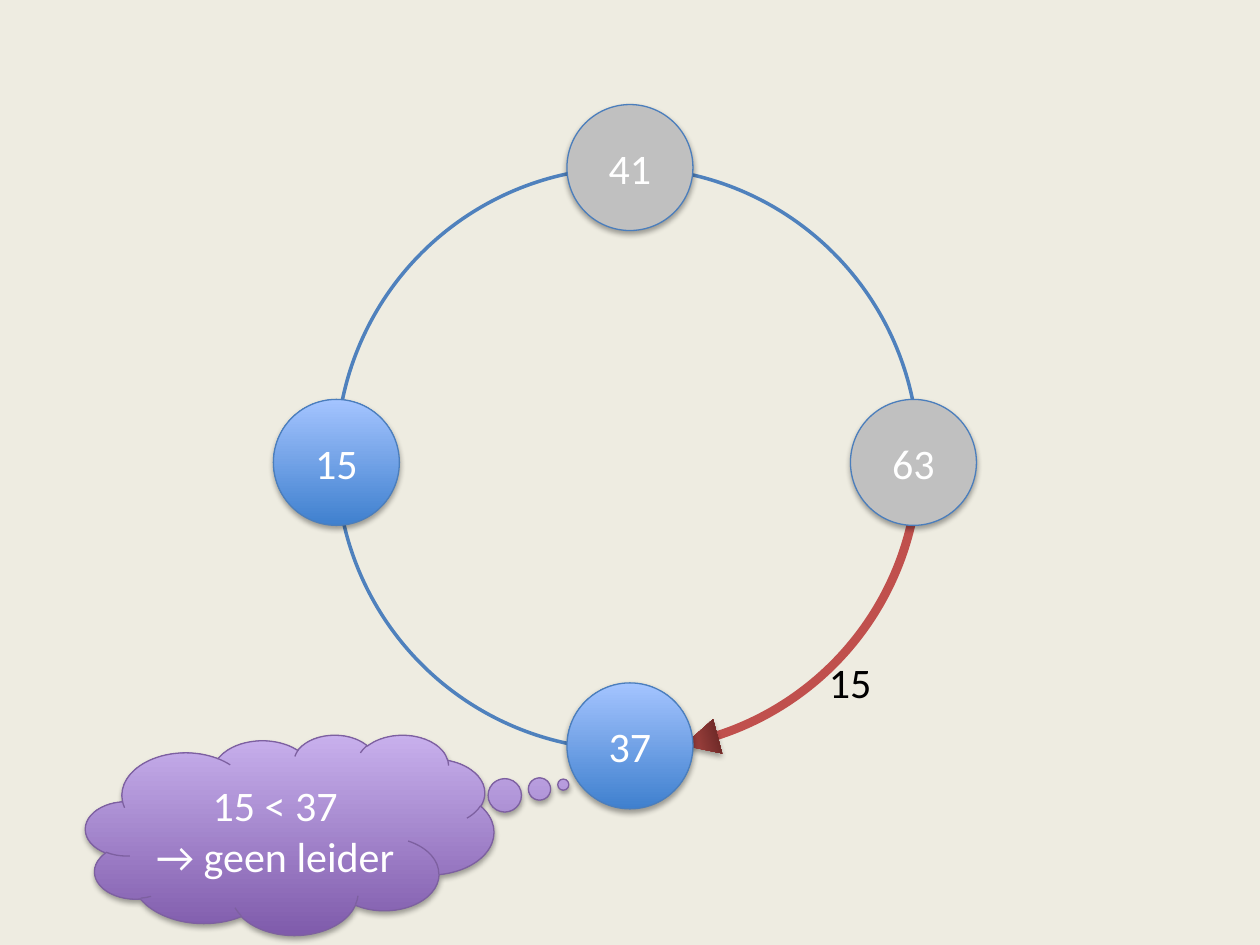
from lxml.etree import SubElement
from pptx import Presentation
from pptx.dml.color import RGBColor
from pptx.enum.shapes import MSO_SHAPE as Shape
from pptx.enum.text import MSO_ANCHOR as Anchor, MSO_AUTO_SIZE as AutoSize, PP_ALIGN as Align
from pptx.oxml.ns import qn
from pptx.util import Inches, Pt

BLUE = ("3F80CE", "A4C4FF")
PURPLE = ("7F5BAB", "C8B0ED")
RED = ("C0504D", "632523")
GREY = "C0C0C0"


def rgb(color):
    return RGBColor.from_string(color)


def add_preset(shapes, preset, box, line=None, width=0.75):
    """Add an unfilled preset shape without shadow."""
    shape = shapes.add_shape(preset, *map(Inches, box))
    shape.shadow.inherit = False
    shape.fill.background()
    if line:
        shape.line.color.rgb = rgb(line)
        shape.line.width = Pt(width)
    else:
        shape.line.fill.background()
    return shape


def paint(shape, fill, angle=90):
    """Fill with one colour, or with a gradient for a pair of colours."""
    if isinstance(fill, str):
        shape.fill.solid()
        shape.fill.fore_color.rgb = rgb(fill)
        return
    shape.fill.gradient()
    shape.fill.gradient_angle = angle
    for stop, color in zip(shape.fill.gradient_stops, fill):
        stop.color.rgb = rgb(color)


def add_shadow(shape):
    effects = shape._element.spPr.find(qn("a:effectLst"))
    shadow = SubElement(effects, qn("a:outerShdw"), blurRad="40000", dist="23000",
                        dir="5400000", rotWithShape="0")
    black = SubElement(shadow, qn("a:srgbClr"), val="000000")
    SubElement(black, qn("a:alpha"), val="35000")


def write(frame, lines, color, align):
    for i, line in enumerate(lines):
        paragraph = frame.add_paragraph() if i else frame.paragraphs[0]
        paragraph.alignment = align
        run = paragraph.add_run()
        run.text = line
        run.font.name = "Calibri"
        run.font.size = Pt(24)
        run.font.color.rgb = rgb(color)


def add_labelled(shapes, preset, box, lines, fill, line):
    """Add a filled shape with shadow and centred white text."""
    shape = add_preset(shapes, preset, box, line)
    paint(shape, fill)
    add_shadow(shape)
    shape.text_frame.vertical_anchor = Anchor.MIDDLE
    write(shape.text_frame, lines, "FFFFFF", Align.CENTER)
    return shape


def add_message(shapes, ring_box, label):
    """Red arrow along the lower right of the ring, with its value."""
    left, top, width, height = ring_box
    message = shapes.add_group_shape().shapes

    value = message.add_textbox(*map(Inches, (left + 3.81, top + 3.83, 0.54, 0.5)))
    value.text_frame.word_wrap = False
    value.text_frame.auto_size = AutoSize.SHAPE_TO_FIT_TEXT
    write(value.text_frame, [label], "000000", Align.LEFT)

    arc = add_preset(message, Shape.ARC, ring_box, RED[0], 5)
    arc.adjustments[0] = 6.6  # 11 degrees
    arc.adjustments[1] = 44  # 73.3 degrees

    head = add_preset(message, Shape.ISOSCELES_TRIANGLE,
                      (left + 2.75, top + 4.41, 0.28, 0.28))
    head.rotation = 255
    paint(head, RED, 270)
    add_shadow(head)


def add_nodes(shapes):
    nodes = [("15", 2.17, 3.17, BLUE), ("41", 4.5, 0.83, GREY),
             ("63", 6.75, 3.17, GREY), ("37", 4.5, 5.42, BLUE)]
    for number, left, top, fill in nodes:
        add_labelled(shapes, Shape.OVAL, (left, top, 1, 1), [number], fill, "4B7EBC")


def add_thought(shapes, box):
    cloud = add_labelled(shapes, Shape.CLOUD_CALLOUT, box,
                         ["15 < 37", "→ geen leider"], PURPLE, "7D60A0")
    cloud.adjustments[0] = 0.67
    cloud.adjustments[1] = -0.25


def main():
    prs = Presentation()
    prs.slide_width, prs.slide_height = Inches(10), Inches(7.5)
    slide = prs.slides.add_slide(prs.slide_layouts[6])
    slide.background.fill.solid()
    slide.background.fill.fore_color.rgb = rgb("EEECE1")

    ring_box = (2.67, 1.33, 4.62, 4.62)
    add_preset(slide.shapes, Shape.OVAL, ring_box, "4F81BD", 2)
    add_message(slide.shapes, ring_box, "15")
    add_nodes(slide.shapes)
    add_thought(slide.shapes, (0.68, 5.83, 3.24, 1.59))
    prs.save("out.pptx")


if __name__ == "__main__":
    main()
